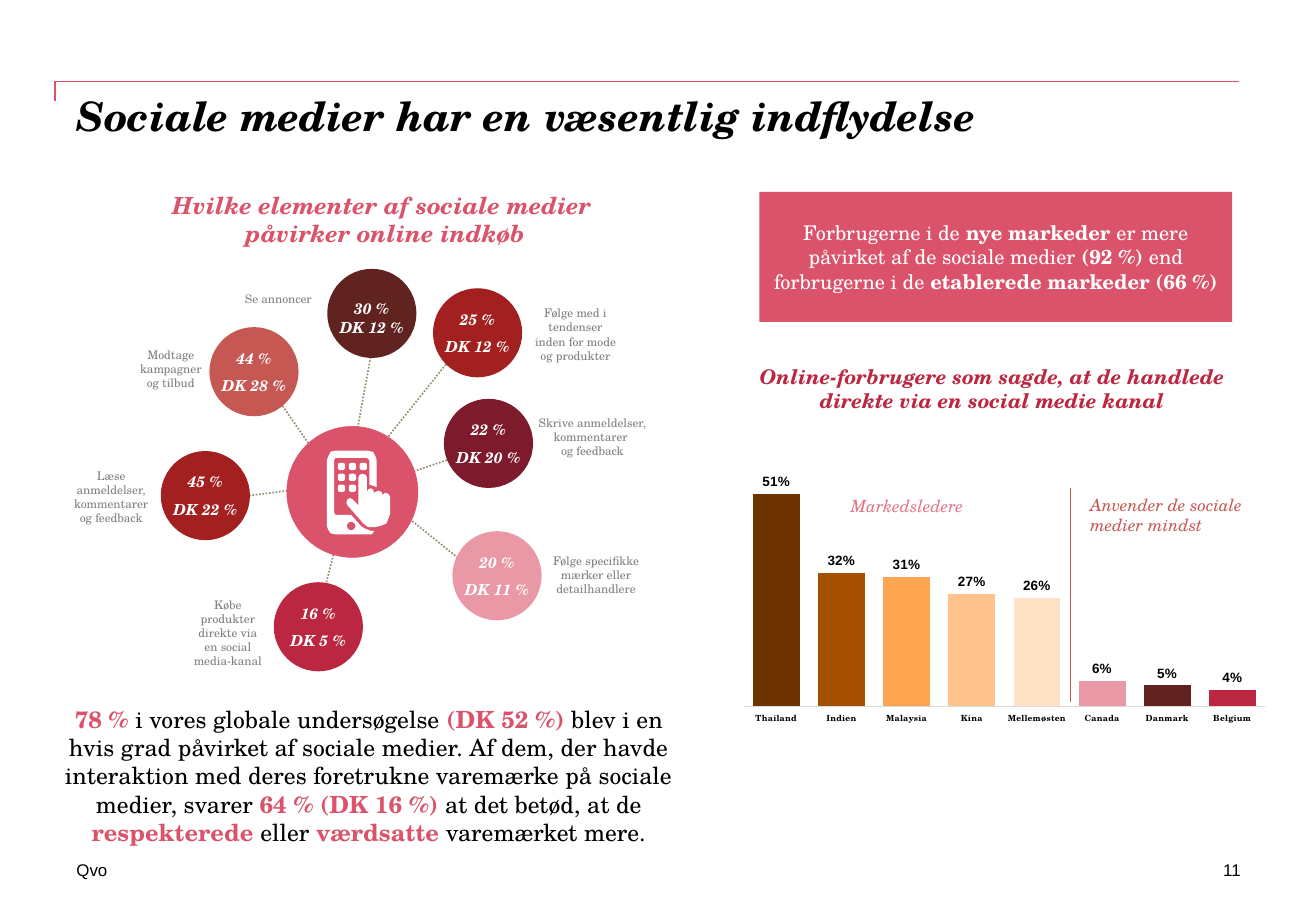
import math
import pptx
import pptx.chart.data
import pptx.dml.color
import pptx.enum.chart
import pptx.enum.dml
import pptx.enum.shapes
import pptx.enum.text
import pptx.oxml
import pptx.oxml.ns
import pptx.util
from pptx.util import Inches

SERIF, SANS = "TeX Gyre Schola", "Arial"
ALIGN = pptx.enum.text.PP_ALIGN
ANCHOR = pptx.enum.text.MSO_ANCHOR
SHAPE = pptx.enum.shapes.MSO_SHAPE

COLORS = {
    "rose": "DB536A", "black": "000000", "white": "FFFFFF", "gray": "808080",
    "khaki": "968C6D", "brick": "C65853", "maroon": "602320", "red": "A32020",
    "wine": "7D1A2B", "pink": "E998A6", "crimson": "BB2740", "blush": "E27588",
    "brown": "6E3400", "rust": "A54F00", "orange": "FFA451", "peach": "FFC28B",
    "cream": "FFE1C5", "rule": "D9D9D9",
}

# bubble left, top, colour, world share, Danish share, spoke, label, label box
BUBBLES = [
    (1.73, 2.7, "brick", 44, 28, (2.31, 3.32, 2.6, 3.74),
     "Modtage kampagner og tilbud", (1.01, 2.81, 0.79, 0.45)),
    (2.7, 2.22, "maroon", 30, 12, (3.05, 2.94, 2.94, 3.54),
     "Se annoncer", (1.68, 2.35, 1.22, 0.22)),
    (3.57, 2.38, "red", 25, 12, (3.67, 3, 3.11, 3.7),
     "Følge med i tendenser inden for mode og produkter", (4.29, 2.47, 0.89, 0.57)),
    (3.66, 3.29, "wine", 22, 20, (3.73, 3.77, 3.26, 3.93),
     "Skrive anmeldelser, kommentarer \nog feedback", (4.16, 3.37, 1.43, 0.45)),
    (3.73, 4.38, "pink", 20, 11, (3.79, 4.61, 3.23, 4.16),
     "Følge specifikke mærker eller detailhandlere", (4.3, 4.51, 1.21, 0.45)),
    (2.26, 4.8, "crimson", 16, 5, (2.66, 4.9, 2.87, 4.06),
     "Købe produkter direkte via en social media-kanal", (1.48, 4.87, 0.79, 0.69)),
    (1.33, 3.72, "red", 45, 22, (2.05, 4.08, 2.61, 4.01),
     "Læse anmeldelser, kommentarer og feedback", (0.46, 3.81, 0.91, 0.57)),
]

MARKETS = [
    ("Thailand", 0.51, "brown"), ("Indien", 0.32, "rust"),
    ("Malaysia", 0.31, "orange"), ("Kina", 0.27, "peach"),
    ("Mellemøsten", 0.26, "cream"), ("Canada", 0.06, "pink"),
    ("Danmark", 0.05, "maroon"), ("Belgium", 0.04, "crimson"),
]

PHONE = [
    (3.08, 4.37), (3.06, 4.4), (3.02, 4.4), (2.76, 4.4), (2.72, 4.39), (2.7, 4.36),
    (2.69, 4.33), (2.69, 3.79), (2.7, 3.76), (2.72, 3.72), (2.76, 3.71), (3.02, 3.71),
    (3.07, 3.72), (3.09, 3.76), (3.1, 3.79), (3.1, 4.01), (3.07, 4), (3.04, 3.99),
    (3.04, 3.79), (3.02, 3.77), (2.76, 3.77), (2.75, 3.79), (2.75, 4.22), (2.76, 4.24),
    (2.89, 4.24), (2.97, 4.33), (3, 4.35), (3.05, 4.37),
]
HAND = [
    (3.21, 4.2), (3.21, 4.09), (3.2, 4.07), (3.18, 4.06), (3.16, 4.06), (3.15, 4.08),
    (3.14, 4.05), (3.11, 4.04), (3.09, 4.05), (3.08, 4.06), (3.07, 4.03), (3.05, 4.02),
    (3.03, 4.03), (3.02, 4.05), (3.02, 3.93), (3.01, 3.91), (2.98, 3.9), (2.96, 3.91),
    (2.95, 3.93), (2.95, 4.16), (2.9, 4.11), (2.88, 4.1), (2.86, 4.11), (2.85, 4.14),
    (2.86, 4.16), (2.99, 4.31), (3.03, 4.34), (3.08, 4.34), (3.13, 4.33), (3.18, 4.31),
    (3.2, 4.26), (3.21, 4.23),
]


def rgb(name):
    return pptx.dml.color.RGBColor.from_string(COLORS[name])


def style(font, size, color, bold=False, italic=False, face=SERIF):
    font.name, font.size = face, pptx.util.Pt(size)
    font.bold, font.italic = bold, italic
    font.color.rgb = rgb(color)


def write(par, text, size, color, align=ALIGN.CENTER, **look):
    par.text, par.alignment = text, align
    for run in par.runs:
        style(run.font, size, color, **look)


def mix(par, parts, size, plain, strong, bold):
    """Write runs that switch between bold and plain, starting with bold as given."""
    par.alignment = ALIGN.CENTER
    for part in parts:
        run = par.add_run()
        run.text = part
        style(run.font, size, strong if bold else plain, bold=bold)
        bold = not bold


def flush(frame):
    frame.margin_left = frame.margin_right = frame.margin_top = frame.margin_bottom = 0


def text_box(slide, box, inset=False):
    frame = slide.shapes.add_textbox(*map(Inches, box)).text_frame
    frame.word_wrap = True
    if not inset:
        flush(frame)
    return frame.paragraphs[0]


def block(slide, kind, box, color, width=None):
    shape = slide.shapes.add_shape(kind, *map(Inches, box))
    shape.shadow.inherit = False
    shape.fill.solid()
    shape.fill.fore_color.rgb = rgb(color)
    if width:
        shape.line.color.rgb = rgb(color)
        shape.line.width = pptx.util.Pt(width)
    else:
        shape.line.fill.background()
    shape.text_frame.vertical_anchor = ANCHOR.MIDDLE
    return shape


def line(slide, ends, color, width, dash=None):
    link = slide.shapes.add_connector(
        pptx.enum.shapes.MSO_CONNECTOR.STRAIGHT, *map(Inches, ends))
    link.line.color.rgb = rgb(color)
    link.line.width = pptx.util.Pt(width)
    if dash:
        link.line.dash_style = dash
    link.element.spPr.append(pptx.oxml.parse_xml(
        "<a:effectLst %s/>" % pptx.oxml.ns.nsdecls("a")))


def outline(slide, loops, close=True):
    """Build one freeform from lists of points in inches."""
    loops = [[(Inches(x), Inches(y)) for x, y in loop] for loop in loops]
    pen = slide.shapes.build_freeform(*loops[0][0], scale=1.0)
    for i, loop in enumerate(loops):
        if i:
            pen.move_to(*loop[0])
        pen.add_line_segments(loop[1:], close=close)
    shape = pen.convert_to_shape()
    shape.shadow.inherit = False
    return shape


def round_box(x, y, size, radius):
    """Give the points of a square with rounded corners."""
    half = size / 2 - radius
    points = []
    for turn in range(4):
        mid = math.radians(45 + 90 * turn)
        for step in (-45, -22.5, 0, 22.5, 45):
            angle = mid + math.radians(step)
            points.append((x + math.copysign(half, math.cos(mid)) + radius * math.cos(angle),
                           y + math.copysign(half, math.sin(mid)) + radius * math.sin(angle)))
    return points


def bubble(slide, left, top, color, world, dane):
    frame = block(slide, SHAPE.OVAL, (left, top, 0.72, 0.72), color, 1).text_frame
    frame.word_wrap = False
    first, second = frame.paragraphs[0], frame.add_paragraph()
    write(first, f"{world} %", 9, "white", bold=True, italic=True)
    write(second, f"DK {dane} %", 9, "white", bold=True, italic=True)
    if color == "maroon":
        first.line_spacing = 1.5
    else:
        second.space_before = pptx.util.Pt(5.4)


def wheel(slide):
    for *_, spoke, label, box in BUBBLES:
        line(slide, spoke, "khaki", 1, pptx.enum.dml.MSO_LINE.ROUND_DOT)
    for left, top, color, world, dane, spoke, label, box in BUBBLES:
        bubble(slide, left, top, color, world, dane)
        write(text_box(slide, box, inset=True), label, 7, "gray")
    block(slide, SHAPE.OVAL, (2.36, 3.51, 1.08, 1.08), "rose", 0.25)
    keys = [round_box(2.81 + 0.09 * col, 3.84 + 0.09 * row, 0.06, 0.02)
            for row in range(3) for col in range(2 if row else 3)]
    icon = outline(slide, [PHONE, HAND, round_box(2.89, 4.33, 0.07, 0.035)] + keys)
    icon.fill.solid()
    icon.fill.fore_color.rgb = rgb("white")
    icon.line.fill.background()


def bars(slide):
    names, shares, shades = zip(*MARKETS)
    data = pptx.chart.data.CategoryChartData(number_format="0%")
    data.categories = names
    data.add_series("Series 1", shares)
    kind = pptx.enum.chart.XL_CHART_TYPE.COLUMN_CLUSTERED
    chart = slide.shapes.add_chart(kind, *map(Inches, (5.97, 3.69, 4.45, 2.5)), data).chart
    chart.has_legend = chart.has_title = False
    style(chart.font, 10, "black", face=SANS)
    names_axis, share_axis = chart.category_axis, chart.value_axis
    names_axis.major_tick_mark = pptx.enum.chart.XL_TICK_MARK.NONE
    names_axis.format.line.color.rgb = rgb("rule")
    names_axis.format.line.width = pptx.util.Pt(0.75)
    style(names_axis.tick_labels.font, 5, "black", bold=True)
    share_axis.visible = share_axis.has_major_gridlines = False
    share_axis.minimum_scale, share_axis.maximum_scale = 0, 0.6
    plot = chart.plots[0]
    plot.gap_width, plot.overlap, plot.vary_by_categories = 39, -27, False
    for i, shade in enumerate(shades):
        fill = plot.series[0].points[i].format.fill
        fill.solid()
        fill.fore_color.rgb = rgb(shade)
    plot.has_data_labels = True
    labels = plot.data_labels
    labels.show_value = True
    labels.number_format, labels.number_format_is_linked = "0%", False
    labels.position = pptx.enum.chart.XL_LABEL_POSITION.OUTSIDE_END
    style(labels.font, 8, "black", bold=True, face=SANS)
    area = chart.element.xpath("c:chart/c:plotArea")[0]
    for old in area.xpath("c:layout"):
        area.remove(old)
    sizes = "".join(f'<c:{key} val="{val}"/>' for key, val in (
        ("layoutTarget", "inner"), ("xMode", "edge"), ("yMode", "edge"),
        ("x", 0.034), ("y", 0.026), ("w", 0.964), ("h", 0.824)))
    area.insert(0, pptx.oxml.parse_xml(
        f"<c:layout {pptx.oxml.ns.nsdecls('c')}><c:manualLayout>{sizes}</c:manualLayout></c:layout>"))


def heading(slide):
    corner = outline(slide, [[(0.45, 0.83), (0.45, 0.67), (10.2, 0.67)]], close=False)
    corner.fill.background()
    corner.line.color.rgb = rgb("rose")
    corner.line.width = pptx.util.Pt(1)
    title = slide.shapes.title
    title.left, title.top, title.width, title.height = map(Inches, (0.63, 0.75, 9.57, 1))
    flush(title.text_frame)
    title.text_frame.vertical_anchor = ANCHOR.TOP
    write(title.text_frame.paragraphs[0], "Sociale medier har en væsentlig indflydelse",
          24, "black", ALIGN.LEFT, bold=True, italic=True)


def main():
    deck = pptx.Presentation()
    deck.slide_width, deck.slide_height = Inches(10.83), Inches(7.5)
    slide = deck.slides.add_slide(deck.slide_layouts[5])
    heading(slide)
    write(text_box(slide, (0.63, 7.08, 3.07, 0.17)), "Qvo", 10, "black", ALIGN.LEFT, face=SANS)
    write(text_box(slide, (8.4, 7.08, 1.81, 0.17)), "11", 10, "black", ALIGN.RIGHT, face=SANS)
    wheel(slide)
    write(text_box(slide, (0.46, 1.52, 5.42, 0.81), inset=True),
          "Hvilke elementer af sociale medier \npåvirker online indkøb",
          14, "rose", bold=True, italic=True)
    banner = block(slide, SHAPE.RECTANGLE, (6.25, 1.58, 3.89, 1.07), "rose")
    mix(banner.text_frame.paragraphs[0], [
        "Forbrugerne i de ", "nye markeder ", "er mere påvirket af de sociale medier ",
        "(92 %) ", "end forbrugerne i de ", "etablerede markeder (66 %)",
    ], 12, "white", "white", bold=False)
    bars(slide)
    write(text_box(slide, (5.97, 3, 4.39, 0.43)),
          "Online-forbrugere som sagde, at de handlede direkte via en social medie kanal",
          12, "crimson", bold=True, italic=True)
    write(text_box(slide, (7, 4.08, 1.37, 0.14)), "Markedsledere",
          10, "blush", ALIGN.LEFT, italic=True)
    write(text_box(slide, (8.97, 4.07, 1.48, 0.39)), "Anvender de sociale medier mindst",
          10, "brick", ALIGN.LEFT, italic=True)
    line(slide, (8.81, 4.02, 8.81, 5.78), "brick", 0.5)
    mix(text_box(slide, (0.49, 5.8, 5.09, 1)), [
        "78 % ", "i vores globale undersøgelse ", "(DK 52 %) ",
        "blev i en hvis grad påvirket af sociale medier. Af dem, der havde interaktion "
        "med deres foretrukne varemærke på sociale medier, svarer ",
        "64 % (DK 16 %) ", "at det betød, at de ", "respekterede", " eller ",
        "værdsatte", " varemærket mere.",
    ], 14, "black", "rose", bold=True)
    deck.save("out.pptx")


if __name__ == "__main__":
    main()
